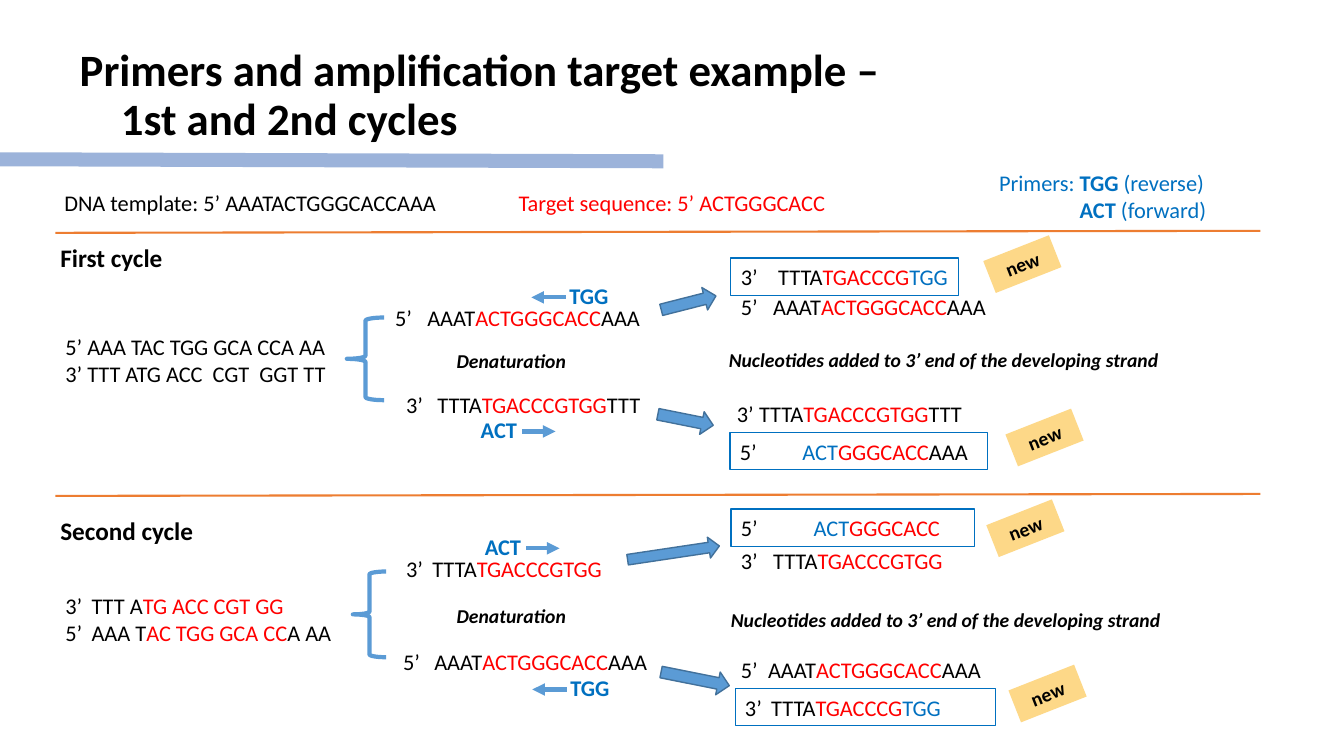
from dataclasses import dataclass

from lxml.etree import SubElement
from pptx import Presentation
from pptx.dml.color import RGBColor
from pptx.enum.shapes import MSO_CONNECTOR, MSO_SHAPE
from pptx.enum.text import MSO_ANCHOR, PP_ALIGN
from pptx.oxml.ns import qn
from pptx.util import Inches, Pt


@dataclass(frozen=True)
class Theme:
    font: str = "Calibri"
    ink: str = "000000"
    target: str = "FF0000"
    primer: str = "0070C0"
    arrow: str = "5B9BD5"
    arrow_edge: str = "42719B"
    rule: str = "ED7D31"
    bar: str = "9CB3DA"
    tag: str = "FDD888"
    title: int = 32
    heading: int = 18
    body: int = 16
    note: int = 14


T = Theme()
SLIDE_W, SLIDE_H = 13.33, 7.5
TEXT_H = 0.37


@dataclass(frozen=True)
class Box:
    """A region on a grid of one-inch columns and rows."""
    x: float
    y: float
    w: float
    h: float

    def cell(self, col, row, w, h=TEXT_H):
        return Box(self.x + col, self.y + row, w, h)

    def emu(self):
        return [Inches(v) for v in (self.x, self.y, self.w, self.h)]


@dataclass(frozen=True)
class Branch:
    """One separated strand, its primer and the double strand it leads to."""
    strand: tuple      # col, row, tab, runs
    primer: tuple      # col, row, name
    arrow: tuple       # col, row, length, height, rotation
    template: tuple    # col, row, tab, runs
    product: tuple     # col, row, width, tab, runs
    tag: tuple         # col, row


@dataclass(frozen=True)
class Cycle:
    heading: str
    heading_row: float
    source: tuple      # row, tab, lines
    brace: tuple       # col, row, width, height
    denaturation: tuple
    note: tuple
    branches: tuple


def rgb(code):
    return RGBColor.from_string(code)


def write(tf, lines, size=T.body, bold=False, italic=False, tab=None, align=PP_ALIGN.LEFT):
    """Fill a frame with lines, each a list of (text, colour[, bold]) runs."""
    tf.word_wrap = True
    for i, runs in enumerate(lines):
        p = tf.add_paragraph() if i else tf.paragraphs[0]
        p.alignment = align
        if tab:
            stops = SubElement(p._p.get_or_add_pPr(), qn("a:tabLst"))
            SubElement(stops, qn("a:tab"), pos=str(Inches(tab)), algn="l")
        p.font.name, p.font.size = T.font, Pt(size)
        p.font.bold, p.font.italic = bold, italic
        for text, colour, *strong in runs:
            r = p.add_run()
            r.text = text
            r.font.color.rgb = rgb(colour)
            if strong:
                r.font.bold = strong[0]


def add_text(slide, box, lines, **style):
    sp = slide.shapes.add_textbox(*box.emu())
    write(sp.text_frame, lines, **style)


def add_preset(slide, kind, box, fill=None, line=None, width=1, rotation=0):
    sp = slide.shapes.add_shape(kind, *box.emu())
    sp.shadow.inherit = False
    sp.rotation = rotation
    if fill:
        sp.fill.solid()
        sp.fill.fore_color.rgb = rgb(fill)
    else:
        sp.fill.background()
    if line:
        sp.line.color.rgb = rgb(line)
        sp.line.width = Pt(width)
    else:
        sp.line.fill.background()
    return sp


def add_line(slide, x1, y1, x2, y2, colour, width, arrowhead=False):
    cx = slide.shapes.add_connector(MSO_CONNECTOR.STRAIGHT, *[Inches(v) for v in (x1, y1, x2, y2)])
    cx.line.color.rgb = rgb(colour)
    cx.line.width = Pt(width)
    if arrowhead:
        SubElement(cx.line._get_or_add_ln(), qn("a:tailEnd"), type="triangle")
    SubElement(cx._element.spPr, qn("a:effectLst"))


def add_title(slide, box):
    add_line(slide, 0, 1.58, 6.58, 1.6, T.bar, 10)
    sp = slide.shapes.title
    sp.left, sp.top, sp.width, sp.height = box.emu()
    tf = sp.text_frame
    tf.vertical_anchor = MSO_ANCHOR.MIDDLE
    write(tf, [[("Primers and amplification target example –", T.ink)]], T.title, bold=True, tab=0.41)
    p = tf.paragraphs[0]
    p.line_spacing = 0.9
    p.add_line_break()
    r = p.add_run()
    r.text = "\t1st and 2nd cycles"
    r.font.color.rgb = rgb(T.ink)


def add_legend(slide, box):
    add_text(slide, box.cell(0.04, 0.2, 4.2), [[("DNA template: 5’ AAATACTGGGCACCAAA", T.ink)]])
    add_text(slide, box.cell(4.22, 0.2, 3.89), [[("Target sequence: 5’ ACTGGGCACC", T.target)]],
             align=PP_ALIGN.CENTER)
    add_text(slide, box.cell(9.31, 0, 2.69, 0.64),
             [[("Primers: ", T.primer), ("TGG", T.primer, True), (" (reverse)", T.primer)],
              [("\t", T.primer), ("ACT", T.primer, True), (" (forward)", T.primer)]], tab=0.8)


def add_primer(slide, box, name):
    """Primer name with an arrow that shows the direction of growth."""
    add_text(slide, box, [[(name, T.primer)]], bold=True)
    start, end = (0.51, 0.84) if name == "ACT" else (0.06, -0.28)
    y = box.y + 0.2
    add_line(slide, box.x + start, y, box.x + end, y, T.arrow, 3, arrowhead=True)


def add_branch(slide, box, branch):
    for col, row, tab, runs in (branch.strand, branch.template):
        add_text(slide, box.cell(col, row, 2.9), [runs], tab=tab)
    col, row, name = branch.primer
    add_primer(slide, box.cell(col, row, 0.7), name)
    *place, rotation = branch.arrow
    add_preset(slide, MSO_SHAPE.RIGHT_ARROW, box.cell(*place), T.arrow, T.arrow_edge, 1, rotation)
    col, row, width, tab, runs = branch.product
    sp = add_preset(slide, MSO_SHAPE.RECTANGLE, box.cell(col, row, width), line=T.primer, width=0.75)
    write(sp.text_frame, [runs], tab=tab)
    sp = add_preset(slide, MSO_SHAPE.RECTANGLE, box.cell(*branch.tag, 0.7, 0.34), T.tag, rotation=-21.5)
    write(sp.text_frame, [[("new", T.ink)]], T.note, bold=True, align=PP_ALIGN.CENTER)


def add_cycle(slide, box, cycle):
    add_line(slide, box.x + 0.05, box.y + 0.01, box.x + box.w, box.y - 0.01, T.rule, 1.5)
    add_text(slide, box.cell(0, cycle.heading_row, 2, 0.4), [[(cycle.heading, T.ink)]],
             size=T.heading, bold=True)
    row, tab, lines = cycle.source
    add_text(slide, box.cell(0.05, row, 3.1, 0.64), lines, tab=tab)
    add_preset(slide, MSO_SHAPE.LEFT_BRACE, box.cell(*cycle.brace), line=T.arrow, width=3)
    for place, width, text in ((cycle.denaturation, 1.69, "Denaturation"),
                               (cycle.note, 4.83, "Nucleotides added to 3’ end of the developing strand")):
        add_text(slide, box.cell(*place, width, 0.34), [[(text, T.ink)]],
                 size=T.note, bold=True, italic=True)
    for branch in cycle.branches:
        add_branch(slide, box, branch)


FORWARD = [("5’\tAAAT", T.ink), ("ACTGGGCACC", T.target), ("AAA", T.ink)]
SHORT = [("3’\tTTTA", T.ink), ("TGACCCGTGG", T.target)]
REVERSE = SHORT + [("TTT", T.ink)]
NEW_REVERSE = [("3’\tTTTA", T.ink), ("TGACCCG", T.target), ("TGG", T.primer)]
NEW_SHORT = [("5’\t", T.ink), ("ACT", T.primer), ("GGGCACC", T.target)]
NEW_FORWARD = NEW_SHORT + [("AAA", T.ink)]

FIRST = Cycle(
    "First cycle", 0.06,
    (0.96, None, [[("5’ AAA TAC TGG GCA CCA AA", T.ink)], [("3’ TTT ATG ACC  CGT  GGT TT", T.ink)]]),
    (2.94, 0.85, 0.37, 0.82), (3.93, 1.11), (6.63, 1.1),
    (Branch((3.32, 0.67, 0.32, FORWARD), (5.05, 0.45, "TGG"), (6.05, 0.59, 0.56, 0.23, -14.3),
            (6.75, 0.56, 0.32, FORWARD), (6.75, 0.26, 2.26, 0.37, NEW_REVERSE), (9.29, 0.15)),
     Branch((3.43, 1.53, 0.31, REVERSE), (4.17, 1.78, "ACT"), (6.02, 1.75, 0.56, 0.23, 11.3),
            (6.71, 1.62, 0.22, REVERSE), (6.74, 1.99, 2.55, 0.62, NEW_FORWARD), (9.51, 1.87))))

SECOND = Cycle(
    "Second cycle", 0.15,
    (0.92, 0.26, [[("3’\tTTT A", T.ink), ("TG ACC CGT GG", T.target)],
                  [("5’\tAAA T", T.ink), ("AC TGG GCA CC", T.target), ("A AA", T.ink)]]),
    (3, 0.76, 0.33, 0.85), (3.93, 1.03), (6.65, 1.07),
    (Branch((3.43, 0.55, 0.26, SHORT), (4.21, 0.33, "ACT"), (5.72, 0.47, 0.92, 0.21, -8.5),
            (6.75, 0.47, 0.32, SHORT), (6.75, 0.14, 2.42, 0.72, NEW_SHORT), (9.32, 0.16)),
     Branch((3.4, 1.47, 0.31, FORWARD), (5.06, 1.73, "TGG"), (6.05, 1.71, 0.69, 0.23, 11.3),
            (6.75, 1.55, 0.27, FORWARD), (6.79, 1.92, 2.58, 0.26, NEW_REVERSE), (9.54, 1.8))))


def main():
    prs = Presentation()
    prs.slide_width, prs.slide_height = Inches(SLIDE_W), Inches(SLIDE_H)
    slide = prs.slides.add_slide(prs.slide_layouts[5])
    add_title(slide, Box(0.69, 0.42, 8.38, 1.07))
    add_legend(slide, Box(0.5, 1.63, 12, 0.64))
    for top, cycle in ((2.3, FIRST), (4.91, SECOND)):
        add_cycle(slide, Box(0.5, top, 12, 2.5), cycle)
    prs.save("out.pptx")


if __name__ == "__main__":
    main()
